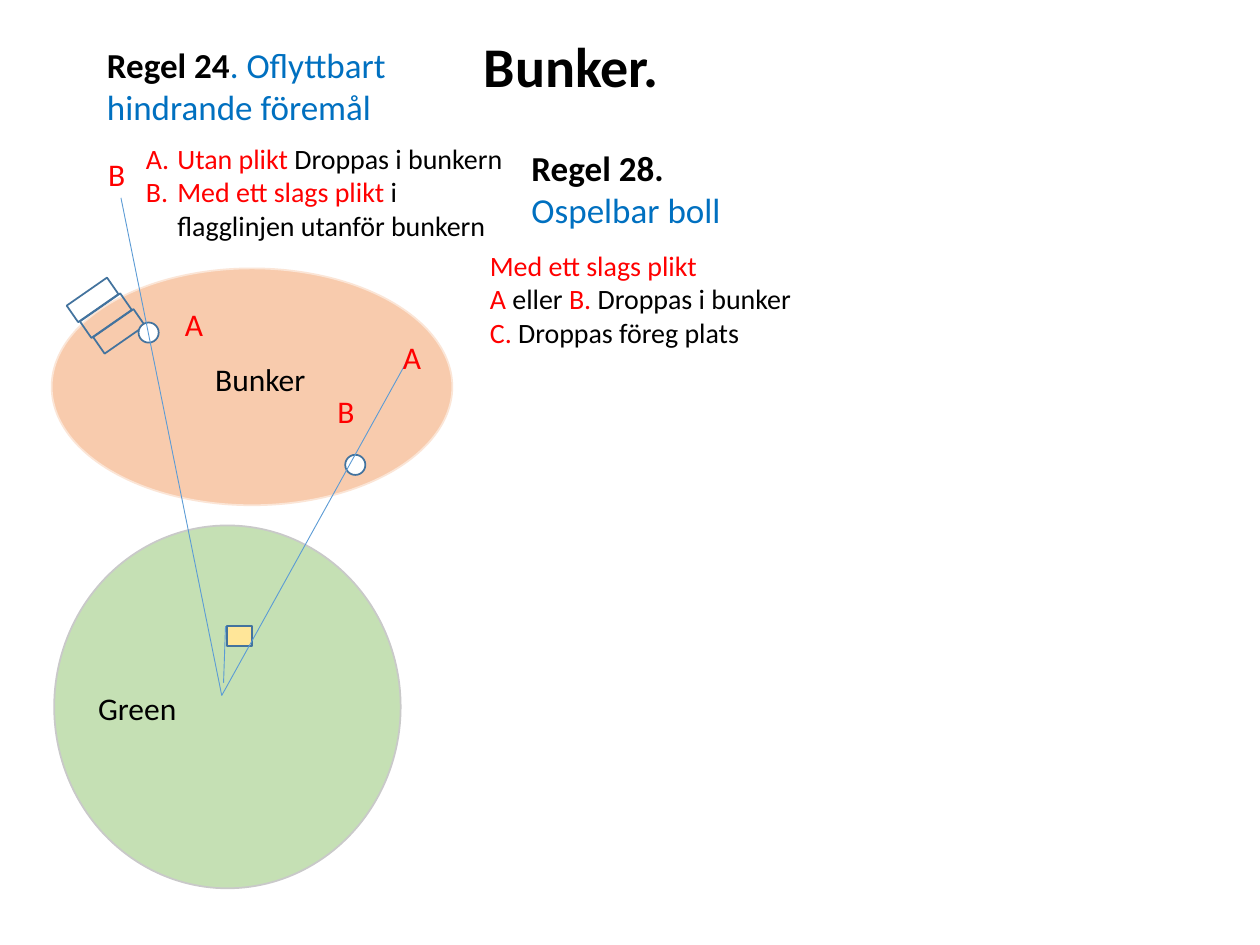
"""Build a golf slide on the rules for a ball in a bunker."""
import dataclasses

import lxml.etree
import pptx
import pptx.dml.color
import pptx.enum.shapes
import pptx.oxml.ns
import pptx.util

KINDS = pptx.enum.shapes.MSO_SHAPE


@dataclasses.dataclass(frozen=True)
class Theme:
    font: str = "Calibri"
    black: str = "000000"
    red: str = "FF0000"
    blue: str = "0070C0"
    white: str = "FFFFFF"
    green: str = "C5E0B4"
    sand: str = "F8CBAD"
    gold: str = "FFE699"
    edge: str = "43739E"
    rim: str = "C9C9C9"
    pale: str = "FBE5D6"
    aim: str = "5B9BD5"
    title: int = 32
    head: int = 20
    label: int = 18
    body: int = 16


THEME = Theme()
WIDTH = pptx.util.Inches(10)
HEIGHT = pptx.util.Inches(7.5)
COLS, ROWS = 100, 75


def place(col, row):
    return round(WIDTH * col / COLS), round(HEIGHT * row / ROWS)


def tint(code):
    return pptx.dml.color.RGBColor.from_string(code)


def paint(item, fill):
    item.fill.solid()
    item.fill.fore_color.rgb = tint(fill)


def add_form(slide, kind, box, fill, edge, turn=0):
    form = slide.shapes.add_shape(kind, *place(*box[:2]), *place(*box[2:]))
    form.shadow.inherit = False
    form.rotation = turn
    if fill:
        paint(form, fill)
    else:
        form.fill.background()
    form.line.color.rgb = tint(edge)
    form.line.width = pptx.util.Pt(1)


def add_line(slide, start, end):
    kind = pptx.enum.shapes.MSO_CONNECTOR.STRAIGHT
    line = slide.shapes.add_connector(kind, *place(*start), *place(*end))
    line.line.color.rgb = tint(THEME.aim)
    line.line.width = pptx.util.Pt(0.5)
    props = line._element.spPr
    lxml.etree.SubElement(props, pptx.oxml.ns.qn("a:effectLst"))


def add_mark(para):
    props = para._p.get_or_add_pPr()
    inset = pptx.util.Inches(0.25)
    props.set("marL", str(inset))
    props.set("indent", str(-inset))
    mark = lxml.etree.SubElement(props, pptx.oxml.ns.qn("a:buAutoNum"))
    mark.set("type", "alphaUcPeriod")


def add_text(slide, box, size, paras, fill=None, listed=False):
    item = slide.shapes.add_textbox(*place(*box[:2]), *place(*box[2:]))
    if fill:
        paint(item, fill)
    frame = item.text_frame
    frame.word_wrap = True
    for count, parts in enumerate(paras):
        para = frame.add_paragraph() if count else frame.paragraphs[0]
        para.text = parts[0][0]
        for words, *_ in parts[1:]:
            para.add_run().text = words
        for run, (_, hue, *bold) in zip(para.runs, parts):
            run.font.name = THEME.font
            run.font.size = pptx.util.Pt(size)
            run.font.color.rgb = tint(hue)
            run.font.bold = bool(bold)
        if listed:
            add_mark(para)


def add_label(slide, box, words, hue, fill=None):
    add_text(slide, box, THEME.label, [[(words, hue)]], fill)


def add_green(slide):
    add_form(slide, KINDS.OVAL, (4.3, 41.7, 27.5, 28.8), THEME.green, THEME.rim)
    add_line(slide, (17.7, 55.5), (17.9, 49.7))
    add_form(slide, KINDS.RECTANGLE, (18, 49.7, 2, 1.6), THEME.gold, THEME.edge)
    add_label(slide, (6.8, 54.2, 12.2, 4), "Green", THEME.black, THEME.green)


def add_sand(slide):
    add_form(slide, KINDS.OVAL, (4.1, 21.3, 31.8, 18.8), THEME.sand, THEME.pale)
    for step in range(3):
        box = (5.4 + 1.05 * step, 23 + 1.25 * step, 3.9, 1.6)
        add_form(slide, KINDS.RECTANGLE, box, None, THEME.edge, turn=325.2)


def add_heads(slide):
    black, blue = THEME.black, THEME.blue
    add_text(slide, (37.4, 2, 24.9, 6.4), THEME.title,
             [[("Bunker.", black, True)]])
    add_text(slide, (7.5, 3, 25.1, 7.7), THEME.head,
             [[("Regel 24", black, True),
               (". Oflyttbart hindrande föremål", blue)]])
    add_text(slide, (41.2, 11.1, 17.3, 7.7), THEME.head,
             [[("Regel 28. ", black, True), ("Ospelbar boll", blue)]])


def add_rules(slide):
    black, red = THEME.black, THEME.red
    add_text(slide, (10.6, 10.7, 30.6, 9.1), THEME.body,
             [[("Utan plikt ", red), ("Droppas i bunkern", black)],
              [("Med ett slags plikt ", red),
               ("i flagglinjen utanför bunkern", black)]], listed=True)
    add_text(slide, (37.9, 19.2, 26.6, 9.1), THEME.body,
             [[("Med ett slags plikt", red)],
              [("A", red), (" eller ", black), ("B. ", red),
               ("Droppas i bunker", black)],
              [("C. ", red), ("Droppas föreg plats", black)]])


def add_play(slide):
    for col, row in ((27.4, 36.1), (11, 25.6)):
        add_form(slide, KINDS.OVAL, (col, row, 1.6, 1.6), THEME.white, THEME.edge)
    for end in ((9.6, 15.7), (32.5, 28.3)):
        add_line(slide, (17.6, 55.2), end)
    for words, col, row in (("A", 13.7, 23.7), ("B", 7.6, 11.8),
                            ("A", 31, 26.3), ("B", 25.8, 30.6)):
        add_label(slide, (col, row, 4, 4), words, THEME.red)
    add_label(slide, (16.1, 28.1, 13.1, 4), "Bunker", THEME.black)


def main():
    deck = pptx.Presentation()
    deck.slide_width, deck.slide_height = WIDTH, HEIGHT
    slide = deck.slides.add_slide(deck.slide_layouts[6])
    for build in (add_green, add_sand, add_heads, add_rules, add_play):
        build(slide)
    deck.save("out.pptx")


if __name__ == "__main__":
    main()
